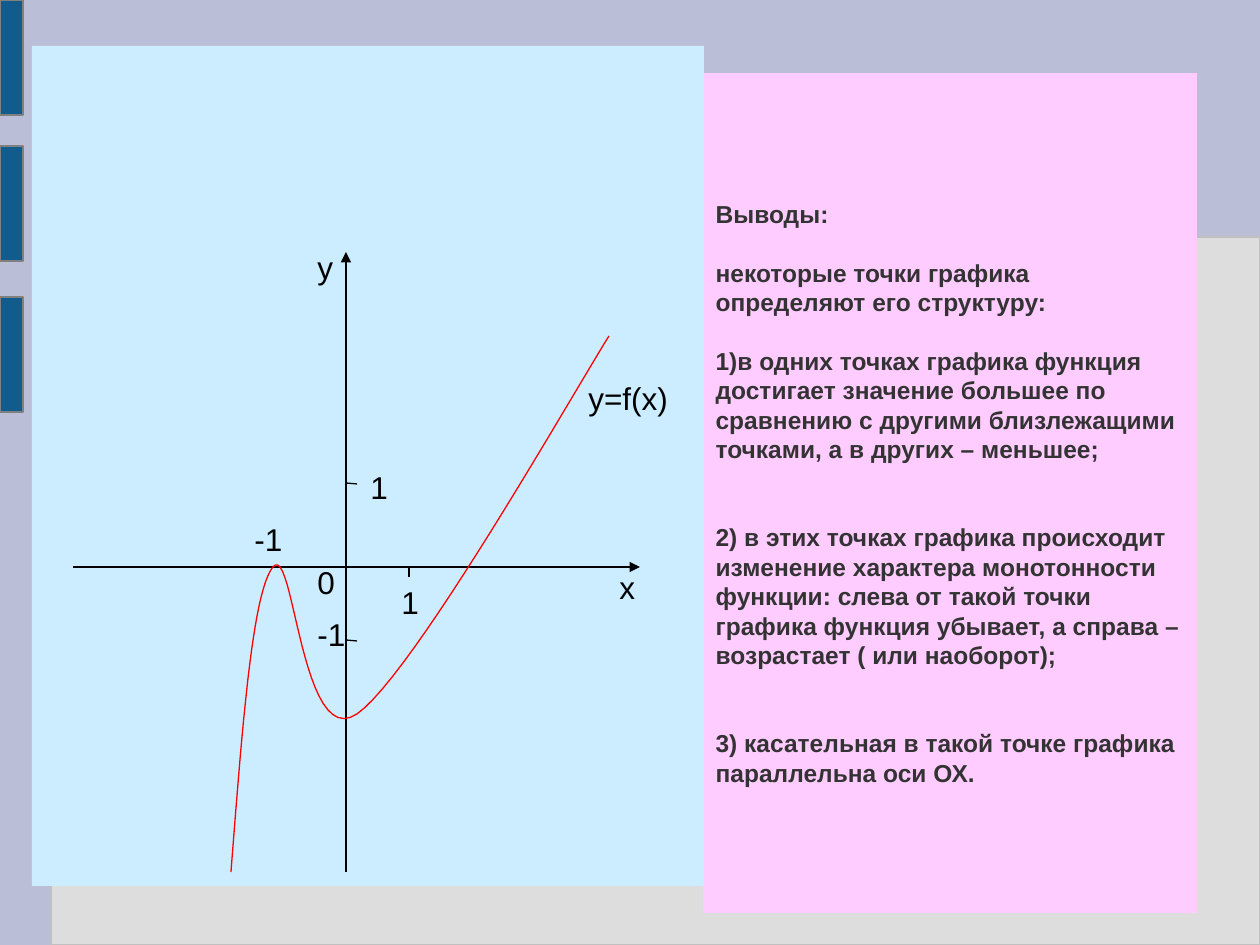
import pptx
import pptx.util
import pptx.dml.color
import pptx.enum.shapes
import pptx.enum.text
import pptx.oxml.ns
import lxml.etree

EMU = 914400 / 126
HUES = {
    "back": "BABED6", "grey": "DDDDDD", "edge": "C0C0C0", "tab": "125C8D",
    "rim": "808080", "pink": "FFCCFF", "sky": "CCECFF", "ink": "333333",
    "black": "000000", "red": "FF0000",
}
LABEL = {"name": "Arial", "size": pptx.util.Pt(18), "bold": False}
HEAD = {"name": "Arial", "size": pptx.util.Pt(14), "bold": True}
LEAD = pptx.util.Pt(16.8)

# Each paragraph follows the number of empty lines above it.
NOTES = [
    (0, "Выводы:"),
    (1, "некоторые точки графика определяют его структуру:"),
    (1, "1)в одних точках графика функция достигает значение большее по "
        "сравнению с другими близлежащими точками, а в других – меньшее;"),
    (2, "2) в этих точках графика происходит изменение характера монотонности "
        "функции: слева от такой точки графика функция убывает, а справа – "
        "возрастает ( или наоборот);"),
    (2, "3) касательная в такой точке графика параллельна оси ОХ."),
]
# Cubic segments joined end to end: start, then two handles and an end each.
CURVE = [(231, 872), (242, 732), (252, 593), (273, 567), (294, 541),
         (301, 752), (357, 714), (413, 675), (571, 397), (609, 336)]
AXES = [(73, 567, 640, 567), (346, 872, 346, 252)]
TICKS = [(346, 640, 357, 641), (409, 567, 409, 577), (346, 483, 357, 484)]
LABELS = [
    ("1", 358, 462, 43), ("1", 389, 577, 43), ("-1", 305, 609, 53),
    ("0", 305, 557, 43), ("х", 607, 562, 40), ("у", 305, 242, 40),
    ("-1", 242, 514, 53), ("y=f(x)", 576, 373, 105),
]


def px(num):
    return pptx.util.Emu(round(num * EMU))


def rgb(hue):
    return pptx.dml.color.RGBColor.from_string(HUES[hue])


def trace(pts, steps=24):
    """Return points along the joined cubic segments."""
    out = [pts[0]]
    for i in range(0, len(pts) - 1, 3):
        a, b, c, d = pts[i:i + 4]
        for n in range(1, steps + 1):
            t = n / steps
            u = 1 - t
            out.append(tuple(
                u**3 * a[k] + 3 * u * u * t * b[k] + 3 * u * t * t * c[k] + t**3 * d[k]
                for k in (0, 1)))
    return out


class Pen:
    def __init__(self, slide):
        self.slide = slide
        self.shapes = slide.shapes
        slide.background.fill.solid()
        slide.background.fill.fore_color.rgb = rgb("back")

    def fill(self, shape, hue):
        shape.fill.solid()
        shape.fill.fore_color.rgb = rgb(hue)

    def stroke(self, shape, hue):
        shape.line.color.rgb = rgb(hue)
        shape.line.width = pptx.util.Pt(0.75)

    def font(self, run, style, hue):
        for key, val in style.items():
            setattr(run.font, key, val)
        run.font.color.rgb = rgb(hue)

    def box(self, x, y, w, h, hue, rim=None):
        kind = pptx.enum.shapes.MSO_SHAPE.RECTANGLE
        shape = self.shapes.add_shape(kind, px(x), px(y), px(w), px(h))
        shape.shadow.inherit = False
        self.fill(shape, hue)
        if rim:
            self.stroke(shape, rim)
        else:
            shape.line.fill.background()

    def title(self, x, y, w, h, paras):
        head = self.shapes.title
        place = {"left": x, "top": y, "width": w, "height": h}
        for key, val in place.items():
            setattr(head, key, px(val))
        self.fill(head, "pink")
        # Bring the panel in front of the backdrop.
        head.element.getparent().append(head.element)
        frame = head.text_frame
        frame.word_wrap = True
        frame.auto_size = pptx.enum.text.MSO_AUTO_SIZE.NONE
        frame.vertical_anchor = pptx.enum.text.MSO_ANCHOR.MIDDLE
        for i, (gap, text) in enumerate(paras):
            para = frame.add_paragraph() if i else frame.paragraphs[0]
            form = {"alignment": pptx.enum.text.PP_ALIGN.LEFT,
                    "line_spacing": LEAD,
                    "space_before": pptx.util.Emu(gap * LEAD)}
            for key, val in form.items():
                setattr(para, key, val)
            run = para.add_run()
            run.text = text
            self.font(run, HEAD, "ink")

    def line(self, x1, y1, x2, y2, arrow=False):
        kind = pptx.enum.shapes.MSO_CONNECTOR.STRAIGHT
        line = self.shapes.add_connector(kind, px(x1), px(y1), px(x2), px(y2))
        self.stroke(line, "black")
        qn = pptx.oxml.ns.qn
        props = line.element.find(qn("p:spPr"))
        if arrow:
            lxml.etree.SubElement(props.find(qn("a:ln")), qn("a:tailEnd"), type="triangle")
        lxml.etree.SubElement(props, qn("a:effectLst"))

    def curve(self, pts):
        pts = [(px(x), px(y)) for x, y in trace(pts)]
        path = self.shapes.build_freeform(*pts[0])
        path.add_line_segments(pts[1:], close=False)
        shape = path.convert_to_shape()
        shape.shadow.inherit = False
        shape.fill.background()
        self.stroke(shape, "red")

    def label(self, text, x, y, w):
        frame = self.shapes.add_textbox(px(x), px(y), px(w), px(50)).text_frame
        frame.word_wrap = False
        run = frame.paragraphs[0].add_run()
        run.text = text
        self.font(run, LABEL, "black")


def main():
    deck = pptx.Presentation()
    deck.slide_width, deck.slide_height = px(1260), px(945)
    pen = Pen(deck.slides.add_slide(deck.slide_layouts[5]))
    pen.box(51, 237, 1209, 708, "grey", "edge")
    for y in (0, 146, 297):
        pen.box(0, y, 23, 115, "tab", "rim")
    pen.title(703, 73, 494, 840, NOTES)
    pen.box(32, 46, 672, 840, "sky")
    for axis in AXES:
        pen.line(*axis, arrow=True)
    pen.curve(CURVE)
    for tick in TICKS:
        pen.line(*tick)
    for label in LABELS:
        pen.label(*label)
    deck.save("out.pptx")


if __name__ == "__main__":
    main()
